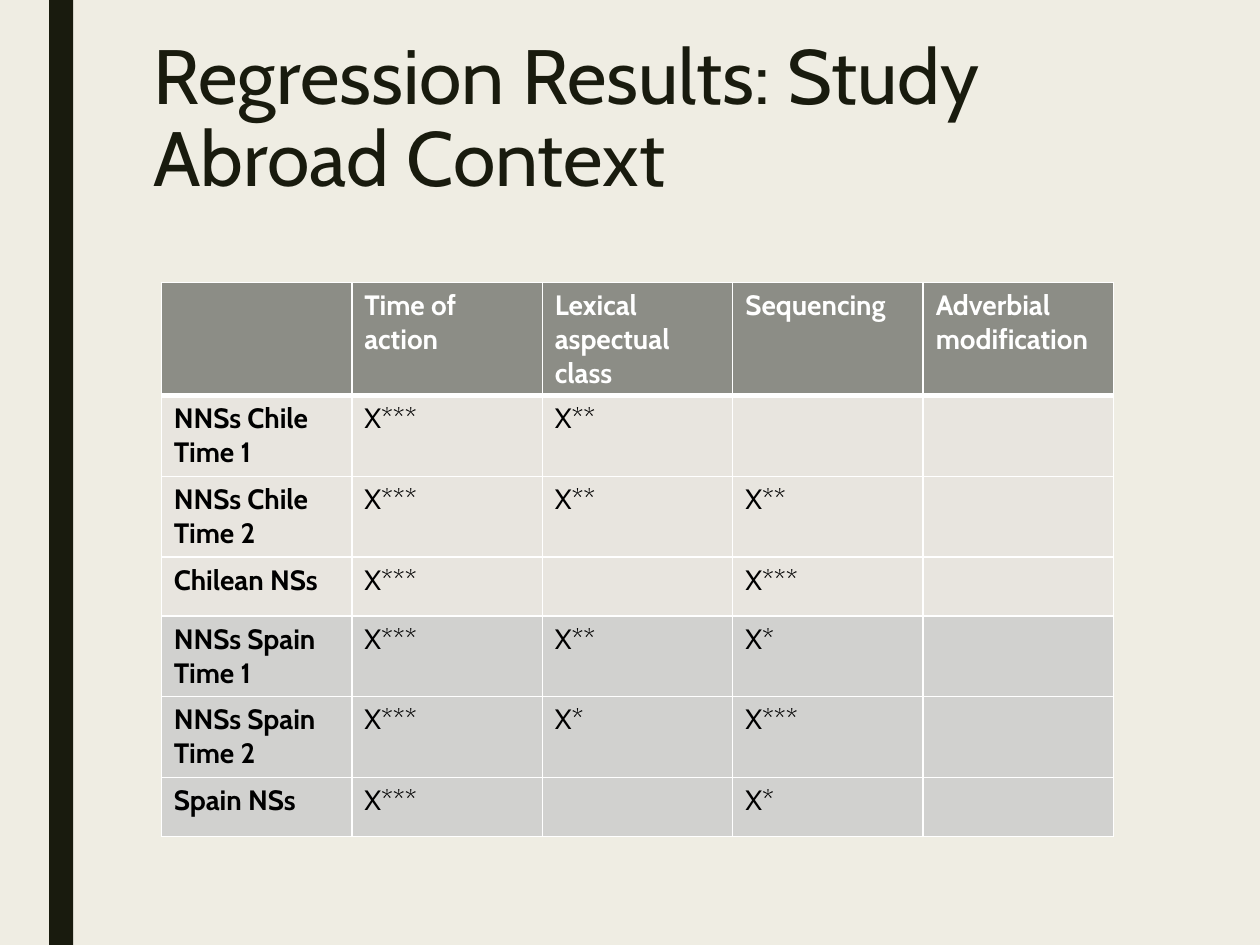
"""Build the regression results slide for the study abroad context."""
from dataclasses import dataclass

from lxml import etree
from pptx import Presentation
from pptx.dml.color import RGBColor
from pptx.enum.shapes import MSO_SHAPE
from pptx.enum.text import MSO_ANCHOR
from pptx.oxml.ns import qn
from pptx.util import Inches, Pt

RECTANGLE = MSO_SHAPE.RECTANGLE
TOP = MSO_ANCHOR.TOP
INK, PAPER, WHITE, BLACK = "191B0E", "EFEDE3", "FFFFFF", "000000"
HEADER_GRAY, CHILE_TINT, SPAIN_TINT = "8C8D86", "E8E5DF", "D1D1CF"
TITLE_FORMAT = {"name": "Cabin", "size": Pt(44), "bold": False}
CELL_FORMAT = {"name": "Cabin", "size": Pt(16)}
COLUMN_WIDTH = 1.512


@dataclass(frozen=True)
class ResultRow:
    labels: tuple[str, ...]
    height: float
    fill: str
    header: bool = False


RESULTS = (
    ResultRow(("", "Time of action", "Lexical aspectual class", "Sequencing",
               "Adverbial modification"), 0.89, HEADER_GRAY, True),
    ResultRow(("NNSs Chile\nTime 1", "X***", "X**", "", ""), 0.64, CHILE_TINT),
    ResultRow(("NNSs Chile Time 2", "X***", "X**", "X**", ""), 0.64, CHILE_TINT),
    ResultRow(("Chilean NSs", "X***", "", "X***", ""), 0.47, CHILE_TINT),
    ResultRow(("NNSs Spain\nTime 1", "X***", "X**", "X*", ""), 0.64, SPAIN_TINT),
    ResultRow(("NNSs Spain\nTime 2", "X***", "X*", "X***", ""), 0.64, SPAIN_TINT),
    ResultRow(("Spain NSs", "X***", "", "X*", ""), 0.47, SPAIN_TINT),
)


def paint(fill, color: str) -> None:
    fill.solid()
    fill.fore_color.rgb = RGBColor.from_string(color)


def format_font(font, values: dict, color: str) -> None:
    for attribute, value in values.items():
        setattr(font, attribute, value)
    paint(font.fill, color)


def add_borders(cell, bottom_width: int) -> None:
    properties = cell._tc.get_or_add_tcPr()
    widths = {"a:lnL": 1, "a:lnR": 1, "a:lnT": 1, "a:lnB": bottom_width}
    for position, (tag, width) in enumerate(widths.items()):
        border = etree.Element(qn(tag), w=str(Pt(width)))
        solid = etree.SubElement(border, qn("a:solidFill"))
        etree.SubElement(solid, qn("a:srgbClr"), val=WHITE)
        properties.insert(position, border)


def fill_cell(cell, label: str, row: ResultRow, bold: bool) -> None:
    cell.text = label
    for paragraph in cell.text_frame.paragraphs:
        format_font(paragraph.font, CELL_FORMAT, WHITE if row.header else BLACK)
        for run in paragraph.runs:
            format_font(run.font, CELL_FORMAT | {"bold": bold},
                        WHITE if row.header else BLACK)
    paint(cell.fill, row.fill)
    add_borders(cell, 3 if row.header else 1)


def add_results_table(slide, rows: tuple[ResultRow, ...]) -> None:
    column_count = len(rows[0].labels)
    table = slide.shapes.add_table(
        len(rows), column_count, Inches(1.28), Inches(2.24),
        Inches(COLUMN_WIDTH * column_count),
        Inches(sum(row.height for row in rows))).table
    table.horz_banding = False
    table.first_col = True
    for column in table.columns:
        column.width = Inches(COLUMN_WIDTH)
    for row_index, row in enumerate(rows):
        table.rows[row_index].height = Inches(row.height)
        for column_index, label in enumerate(row.labels):
            fill_cell(table.cell(row_index, column_index), label, row,
                      row.header or column_index == 0)


def add_side_bar(slide) -> None:
    bar = slide.shapes.add_shape(RECTANGLE, Inches(0.39), Inches(0),
                                 Inches(0.19), Inches(7.5))
    bar.shadow.inherit = False
    paint(bar.fill, INK)
    bar.line.fill.background()


def add_title(slide, wording: str) -> None:
    frame = slide.shapes.add_textbox(Inches(1.12), Inches(0.26),
                                     Inches(7.88), Inches(1.62)).text_frame
    frame.word_wrap = True
    frame.vertical_anchor = TOP
    heading = frame.paragraphs[0]
    heading.line_spacing = 0.89
    run = heading.add_run()
    run.text = wording
    format_font(run.font, TITLE_FORMAT, INK)


def main() -> None:
    presentation = Presentation()
    presentation.slide_width = Inches(10)
    presentation.slide_height = Inches(7.5)
    slide = presentation.slides.add_slide(presentation.slide_layouts[6])
    paint(slide.background.fill, PAPER)
    add_side_bar(slide)
    add_title(slide, "Regression Results: Study Abroad Context")
    add_results_table(slide, RESULTS)
    presentation.save("out.pptx")


if __name__ == "__main__":
    main()
